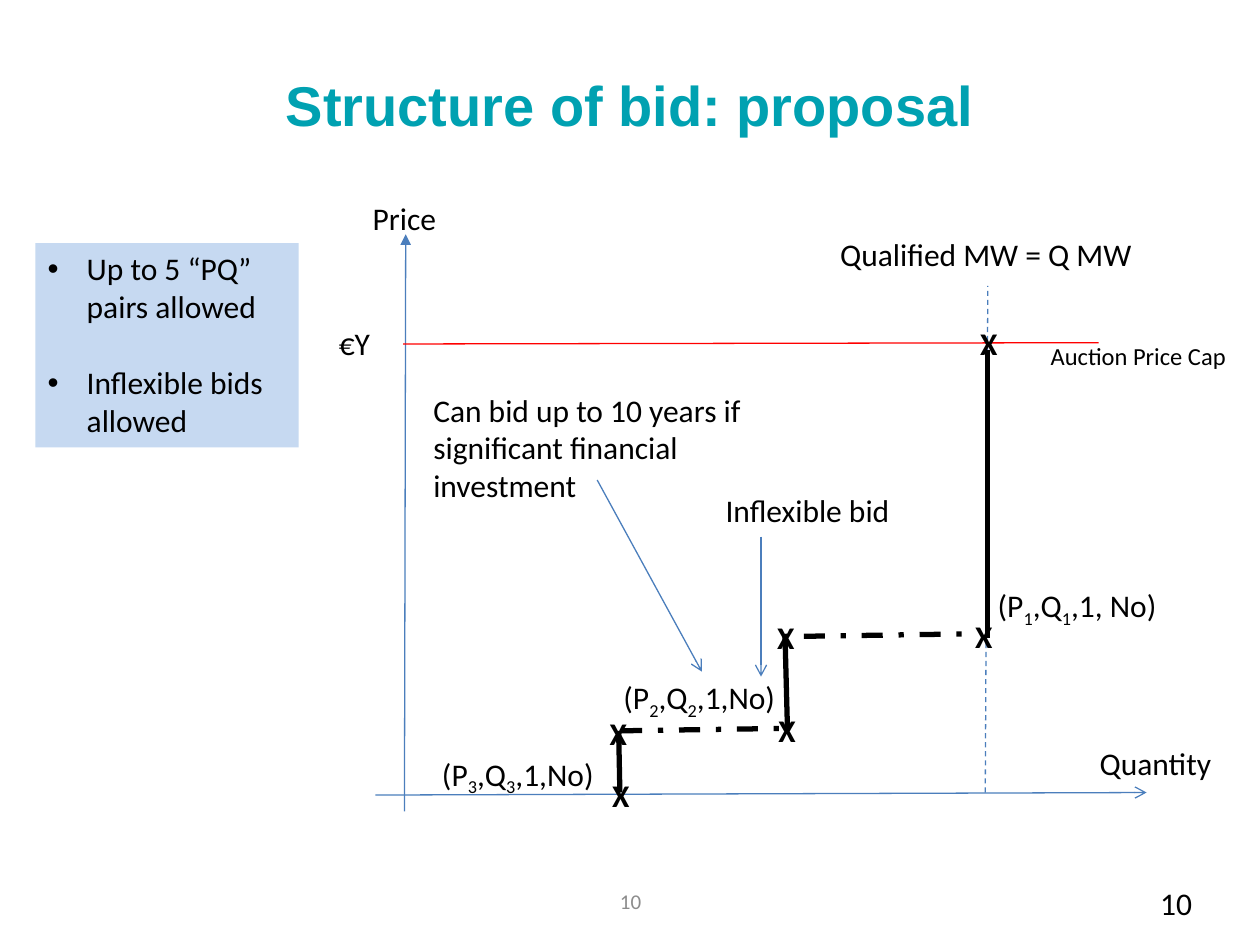
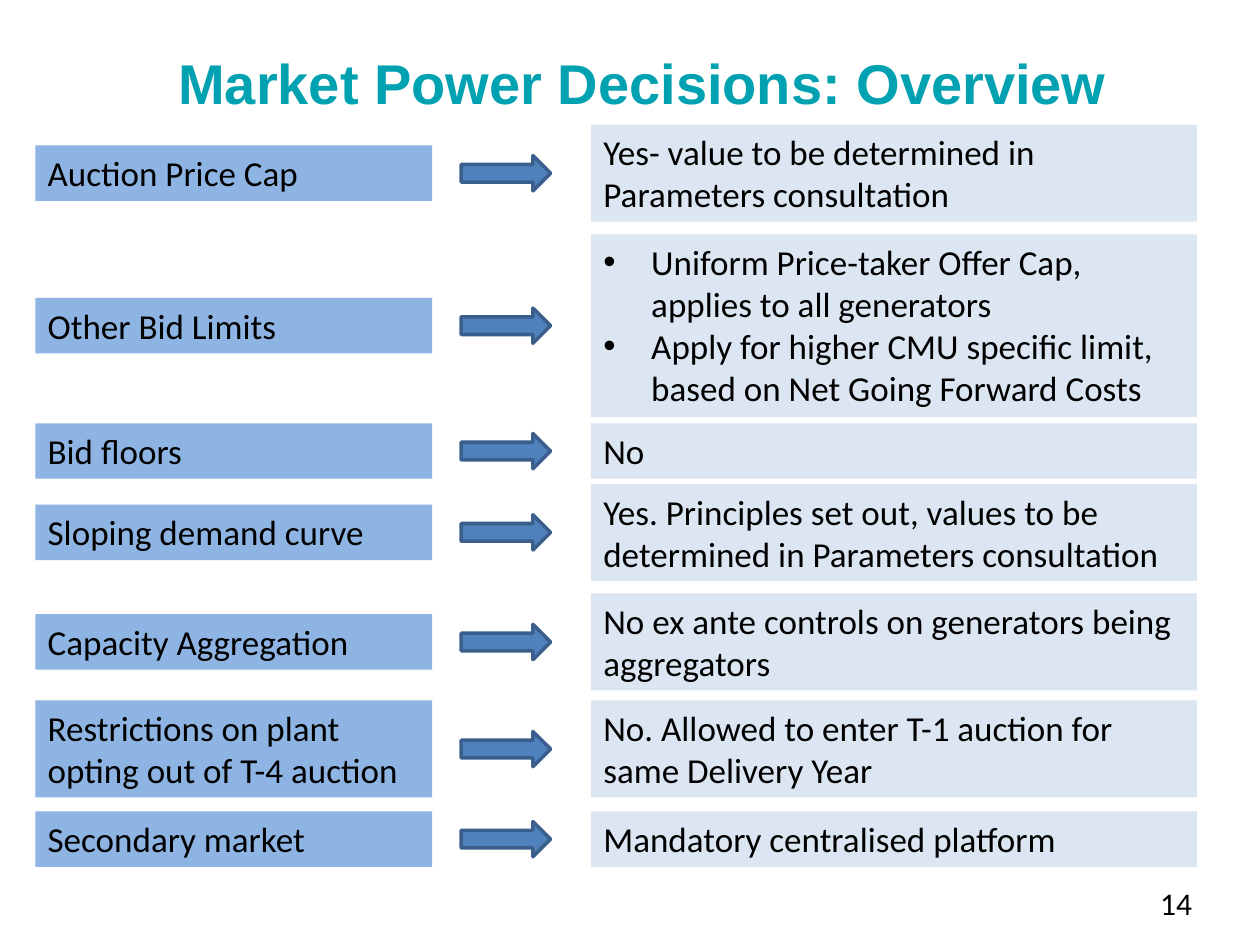
from dataclasses import dataclass

from lxml import etree
from pptx import Presentation
from pptx.dml.color import RGBColor
from pptx.enum.dml import MSO_LINE
from pptx.enum.shapes import MSO_CONNECTOR, MSO_SHAPE
from pptx.enum.text import MSO_ANCHOR, MSO_AUTO_SIZE, PP_ALIGN
from pptx.oxml.ns import qn
from pptx.util import Inches, Pt


@dataclass(frozen=True)
class Theme:
    """Colours, fonts and type sizes shared by the slides."""

    teal: str = "00A1B1"
    ink: str = "000000"
    grey: str = "8C8C8C"
    axis: str = "4B7EBC"
    cap: str = "FF0000"
    note: str = "C6D9F1"
    topic: str = "8EB4E3"
    answer: str = "DCE6F2"
    arrow: str = "4F81BD"
    arrow_edge: str = "3A5F8C"
    heading_font: str = "Arial"
    body_font: str = "Calibri"
    heading: int = 32
    row: int = 20
    body: int = 18
    small: int = 14
    footer: int = 12
    thin: float = 0.75
    edge: float = 2
    thick: float = 3


@dataclass(frozen=True)
class Box:
    """A region in inches."""

    left: float
    top: float
    width: float
    height: float

    def inner(self, left, top, width, height):
        """Return a box placed relative to this one."""
        return Box(self.left + left, self.top + top, width, height)

    def middle(self, left, width, height):
        """Return a vertically centred box inside this one."""
        return self.inner(left, (self.height - height) / 2, width, height)

    def emu(self):
        """Return left, top, width and height as lengths."""
        return [Inches(v) for v in (self.left, self.top, self.width, self.height)]


THEME = Theme()


def colour(value):
    """Return a colour from its hex value."""
    return RGBColor.from_string(value)


def style_font(font, size=THEME.body, ink=THEME.ink, name=THEME.body_font, bold=False):
    """Apply the type settings to a font."""
    for key, value in {"size": Pt(size), "name": name, "bold": bold}.items():
        setattr(font, key, value)
    font.color.rgb = colour(ink)


def style_frame(frame, wrap=True, anchor=MSO_ANCHOR.TOP, fit=MSO_AUTO_SIZE.SHAPE_TO_FIT_TEXT):
    """Apply wrapping, anchoring and fitting to a text frame."""
    settings = {"word_wrap": wrap, "vertical_anchor": anchor, "auto_size": fit}
    for key, value in settings.items():
        setattr(frame, key, value)


def add_bullet(paragraph, indent):
    """Give a paragraph a hanging round bullet."""
    properties = paragraph._p.get_or_add_pPr()
    properties.set("marL", str(Inches(indent)))
    properties.set("indent", str(-Inches(indent)))
    etree.SubElement(properties, qn("a:buFont")).set("typeface", "Arial")
    etree.SubElement(properties, qn("a:buChar")).set("char", "•")


def write_lines(frame, lines, align=PP_ALIGN.LEFT, bullet=0, gap=0, **type_style):
    """Write one paragraph per line, with underscores leading subscript digits."""
    for index, line in enumerate(lines):
        paragraph = frame.add_paragraph() if index else frame.paragraphs[0]
        paragraph.alignment = align
        if index and gap:
            paragraph.space_before = Pt(gap)
        if bullet:
            add_bullet(paragraph, bullet)
        first, *indexed = line.split("_")
        pieces = [(first, False)]
        for part in indexed:
            pieces += [(part[0], True), (part[1:], False)]
        for words, subscript in pieces:
            run = paragraph.add_run()
            run.text = words
            style_font(run.font, **type_style)
            if subscript:
                run._r.get_or_add_rPr().set("baseline", "-25000")


def add_label(slide, box, words, wrap=False, align=PP_ALIGN.LEFT, **type_style):
    """Add a plain text label."""
    label = slide.shapes.add_textbox(*box.emu())
    style_frame(label.text_frame, wrap)
    write_lines(label.text_frame, [words], align, **type_style)
    return label


def add_block(slide, box, fill, shape=MSO_SHAPE.RECTANGLE, edge=None):
    """Add a flat filled shape with an optional outline."""
    block = slide.shapes.add_shape(shape, *box.emu())
    block.shadow.inherit = False
    block.fill.solid()
    block.fill.fore_color.rgb = colour(fill)
    if edge:
        block.line.color.rgb = colour(edge)
        block.line.width = Pt(THEME.edge)
    else:
        block.line.fill.background()
    return block


def add_panel(slide, box, fill, lines, **text_style):
    """Add a filled rectangle holding text."""
    panel = add_block(slide, box, fill)
    style_frame(panel.text_frame)
    write_lines(panel.text_frame, lines, **text_style)


def add_line(slide, box, start, end, ink=THEME.axis, width=THEME.thin, dash=None, tip=None):
    """Join two points given relative to the box."""
    points = [Inches(v) for x, y in (start, end) for v in (box.left + x, box.top + y)]
    line = slide.shapes.add_connector(MSO_CONNECTOR.STRAIGHT, *points)
    line.line.color.rgb = colour(ink)
    line.line.width = Pt(width)
    if dash:
        line.line.dash_style = dash
    if tip:
        etree.SubElement(line.line._get_or_add_ln(), qn("a:tailEnd")).set("type", tip)
    etree.SubElement(line._element.spPr, qn("a:effectLst"))


def start_slide(deck, title, title_box, number):
    """Add a slide with its title and page number."""
    slide = deck.slides.add_slide(deck.slide_layouts[5])
    heading = slide.shapes.title
    for key, value in zip(("left", "top", "width", "height"), title_box.emu()):
        setattr(heading, key, value)
    style_frame(heading.text_frame, anchor=MSO_ANCHOR.MIDDLE, fit=MSO_AUTO_SIZE.NONE)
    write_lines(heading.text_frame, [title], PP_ALIGN.CENTER, size=THEME.heading,
                ink=THEME.teal, name=THEME.heading_font, bold=True)
    add_label(slide, Box(8.62, 6.97, 0.94, 0.4), number, wrap=True, align=PP_ALIGN.RIGHT)
    return slide


def draw_axes(slide, box):
    """Draw the axes, the price cap and the qualified quantity."""
    add_line(slide, box, (0.71, 4.94), (0.72, 0.36), tip="triangle")
    add_line(slide, box, (0.48, 4.81), (6.6, 4.79), tip="arrow")
    add_line(slide, box, (5.32, 4.79), (5.34, 0.77), dash=MSO_LINE.DASH)
    add_line(slide, box, (0.7, 1.23), (6.22, 1.22), ink=THEME.cap)
    for words, left, top, width in (
        ("Price", 0.36, 0.03, 0.71),
        ("Quantity", 6.13, 4.36, 1.1),
        ("Qualified MW = Q MW", 4.07, 0.32, 2.54),
        ("€Y", 0.09, 1.02, 0.45),
    ):
        add_label(slide, box.inner(left, top, width, 0.4), words)
    add_label(slide, box.inner(5.74, 1.16, 1.64, 0.34), "Auction Price Cap",
              wrap=True, size=THEME.small)


def draw_bid_steps(slide, box):
    """Draw the stepped bid curve with its price and quantity points."""
    for left, top in ((3.57, 3.36), (5.14, 3.35), (5.18, 1.02),
                      (3.58, 4.09), (2.24, 4.12), (2.26, 4.61)):
        add_label(slide, box.inner(left, top, 0.34, 0.4), "X", bold=True)
    for start, end, dash in (
        ((5.34, 1.28), (5.34, 3.56), None),
        ((3.73, 3.53), (3.75, 4.3), None),
        ((2.41, 4.3), (2.42, 4.79), None),
        ((2.43, 4.3), (3.8, 4.28), MSO_LINE.DASH_DOT),
        ((3.88, 3.55), (5.24, 3.53), MSO_LINE.DASH_DOT),
    ):
        add_line(slide, box, start, end, THEME.ink, THEME.thick, dash)
    for words, left, top, width in (
        ("(P_1,Q_1,1, No)", 5.32, 3.1, 1.5),
        ("(P_2,Q_2,1,No)", 2.35, 3.83, 1.44),
        ("(P_3,Q_3,1,No)", 0.91, 4.44, 1.44),
    ):
        add_label(slide, box.inner(left, top, width, 0.4), words)


def draw_bid_notes(slide, box):
    """Add the two remarks that point at the second bid."""
    add_line(slide, box, (2.24, 2.31), (3.07, 3.83), tip="arrow")
    add_line(slide, box, (3.54, 2.76), (3.54, 3.87), tip="arrow")
    add_label(slide, box.inner(0.84, 1.55, 2.72, 1.01),
              "Can bid up to 10 years if significant financial investment", wrap=True)
    add_label(slide, box.inner(3.16, 2.35, 1.52, 0.4), "Inflexible bid")


def build_bid_slide(deck):
    """Build the slide on the structure of a bid."""
    slide = start_slide(deck, "Structure of bid: proposal", Box(0.5, 0.3, 9, 1.05), "10")
    diagram = Box(2.5, 1.5, 7.5, 5)
    for draw in (draw_axes, draw_bid_steps, draw_bid_notes):
        draw(slide, diagram)
    footer = add_label(slide, Box(3.42, 6.95, 3.17, 0.4), "10", wrap=True,
                       align=PP_ALIGN.CENTER, size=THEME.footer, ink=THEME.grey)
    style_frame(footer.text_frame, anchor=MSO_ANCHOR.MIDDLE, fit=MSO_AUTO_SIZE.NONE)
    add_panel(slide, Box(0.28, 1.93, 2.09, 1.62), THEME.note,
              ["Up to 5 “PQ” pairs allowed", "Inflexible bids allowed"],
              bullet=0.31, gap=22)


def draw_decision(slide, box, topic, topic_height, answers):
    """Draw one row: a topic, an arrow and the decision taken."""
    add_panel(slide, box.middle(0, 3.15, topic_height), THEME.topic, [topic], size=THEME.row)
    add_block(slide, box.middle(3.38, 0.71, 0.28), THEME.arrow,
              MSO_SHAPE.RIGHT_ARROW, THEME.arrow_edge)
    add_panel(slide, box.middle(4.41, 4.81, box.height), THEME.answer, answers,
              size=THEME.row, bullet=0.38 if len(answers) > 1 else 0)


def build_decisions_slide(deck):
    """Build the overview of market power decisions."""
    slide = start_slide(deck, "Market Power Decisions: Overview", Box(0.6, 0.03, 9, 1.25), "14")
    one_line, two_lines, four_lines = 0.44, 0.77, 1.45
    for top, height, topic, topic_height, answers in (
        (0.99, two_lines, "Auction Price Cap", one_line,
         ["Yes- value to be determined in Parameters consultation"]),
        (1.86, four_lines, "Other Bid Limits", one_line,
         ["Uniform Price-taker Offer Cap, applies to all generators",
          "Apply for higher CMU specific limit, based on Net Going Forward Costs"]),
        (3.36, one_line, "Bid floors", one_line, ["No"]),
        (3.84, two_lines, "Sloping demand curve", one_line,
         ["Yes. Principles set out, values to be determined in Parameters consultation"]),
        (4.71, two_lines, "Capacity Aggregation", one_line,
         ["No ex ante controls on generators being aggregators"]),
        (5.56, two_lines, "Restrictions on plant opting out of T-4 auction", two_lines,
         ["No. Allowed to enter T-1 auction for same Delivery Year"]),
        (6.44, one_line, "Secondary market", one_line, ["Mandatory centralised platform"]),
    ):
        draw_decision(slide, Box(0.28, top, 9.22, height), topic, topic_height, answers)


def main():
    """Build and save the deck."""
    deck = Presentation()
    deck.slide_width, deck.slide_height = Inches(10), Inches(7.5)
    build_bid_slide(deck)
    build_decisions_slide(deck)
    deck.save("out.pptx")


if __name__ == "__main__":
    main()
